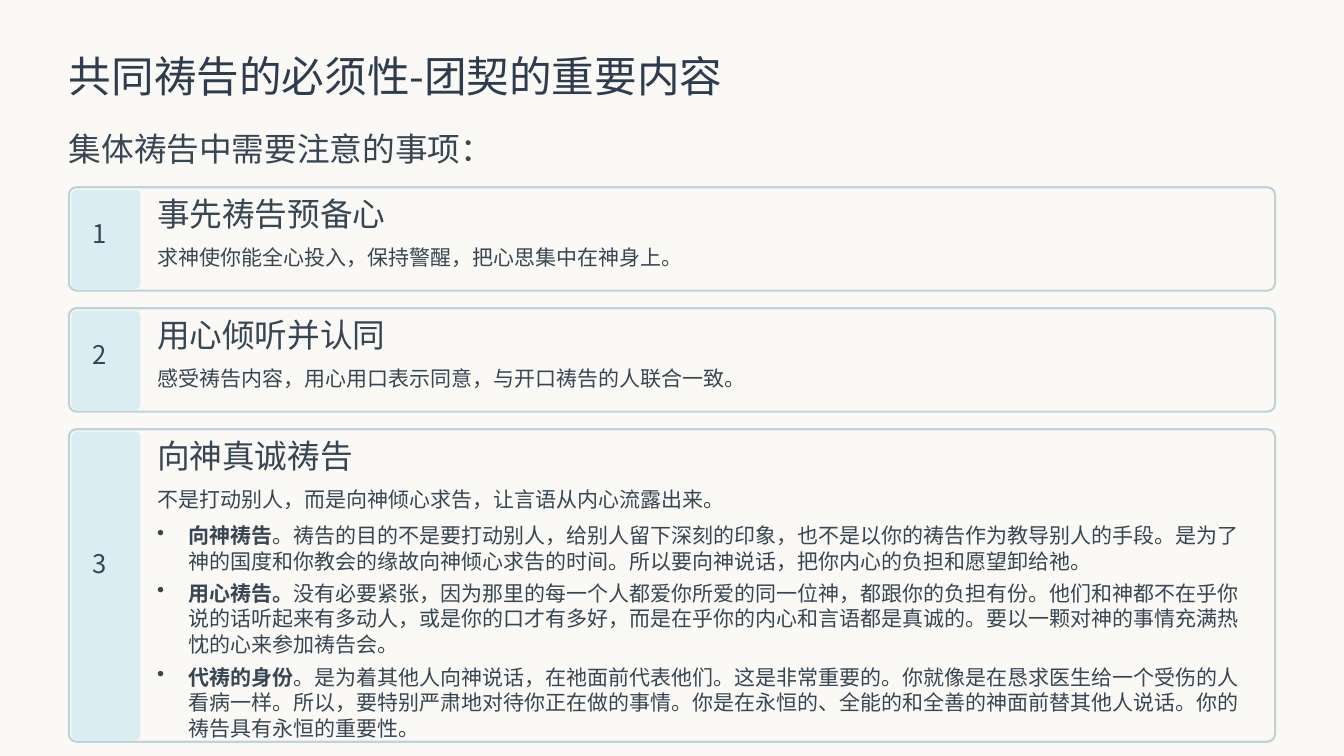
"""Build the slide on what matters when praying together."""
from dataclasses import dataclass

from pptx import Presentation
from pptx import util as u
from pptx.dml.color import RGBColor
from pptx.enum import shapes, text
from pptx.oxml import ns
from lxml import etree

FONT = "Noto Sans CJK SC"
CREAM = RGBColor(0xFA, 0xF9, 0xF5)
NAVY = RGBColor(0x2E, 0x3C, 0x4E)
SLATE = RGBColor(0x38, 0x46, 0x53)
PALE_BLUE = RGBColor(0xD9, 0xED, 0xF2)
BORDER = RGBColor(0xBF, 0xD3, 0xD8)

LEFT, WIDTH = 0.82, 14.36
TEXT_LEFT, TEXT_WIDTH = 1.87, 13.07
FIRST_CARD_TOP, CARD_GAP = 2.23, 0.21
CORNER = 0.09
BULLET_INDENT = 0.38


@dataclass(frozen=True)
class Card:
    """A numbered point."""
    heading: str
    summary: str
    height: float = 1.23
    number_offset: float = 0.43


@dataclass(frozen=True)
class Bullet:
    """A detail that opens with bold words."""
    top: float
    lead: str
    rest: str


CARDS = [
    Card("事先祷告预备心", "求神使你能全心投入，保持警醒，把心思集中在神身上。"),
    Card("用心倾听并认同", "感受祷告内容，用心用口表示同意，与开口祷告的人联合一致。"),
    Card("向神真诚祷告", "不是打动别人，而是向神倾心求告，让言语从内心流露出来。", 3.72, 1.47),
]

BULLETS = [
    Bullet(6.22, "向神祷告",
           "。祷告的目的不是要打动别人，给别人留下深刻的印象，也不是以你的祷告作为教导别人的手段。"
           "是为了神的国度和你教会的缘故向神倾心求告的时间。所以要向神说话，把你内心的负担和愿望卸给祂。"),
    Bullet(6.9, "用心祷告。",
           "没有必要紧张，因为那里的每一个人都爱你所爱的同一位神，都跟你的负担有份。"
           "他们和神都不在乎你说的话听起来有多动人，或是你的口才有多好，而是在乎你的内心和言语都是真诚的。"
           "要以一颗对神的事情充满热忱的心来参加祷告会。"),
    Bullet(7.9, "代祷的身份",
           "。是为着其他人向神说话，在祂面前代表他们。这是非常重要的。"
           "你就像是在恳求医生给一个受伤的人看病一样。所以，要特别严肃地对待你正在做的事情。"
           "你是在永恒的、全能的和全善的神面前替其他人说话。你的祷告具有永恒的重要性。"),
]


def format_run(run, size: float, color: RGBColor, bold: bool = False) -> None:
    """Set the font of a run for both Latin and Chinese text."""
    run.font.name = FONT
    run.font.size = u.Pt(size)
    run.font.bold = bold
    run.font.color.rgb = color
    east_asian = etree.Element(ns.qn("a:ea"), typeface=FONT)
    run.font._element.find(ns.qn("a:latin")).addnext(east_asian)


def prepare_frame(shape, spacing: float, wrap: bool = False):
    """Clear the margins of a text frame and return its first paragraph."""
    frame = shape.text_frame
    frame.margin_left = frame.margin_right = frame.margin_top = frame.margin_bottom = 0
    frame.word_wrap = wrap
    frame.auto_size = text.MSO_AUTO_SIZE.NONE
    frame.vertical_anchor = text.MSO_ANCHOR.TOP
    paragraph = frame.paragraphs[0]
    paragraph.alignment = text.PP_ALIGN.LEFT
    paragraph.line_spacing = u.Pt(spacing)
    return paragraph


def add_box(slide, left: float, top: float, width: float, height: float):
    """Add an empty text box."""
    return slide.shapes.add_textbox(*map(u.Inches, (left, top, width, height)))


def add_label(slide, left: float, top: float, width: float, height: float,
              words: str, size: float, spacing: float) -> None:
    """Add one line of text."""
    paragraph = prepare_frame(add_box(slide, left, top, width, height), spacing)
    paragraph.add_run().text = words
    format_run(paragraph.runs[0], size, SLATE)


def add_panel(slide, left: float, top: float, width: float, height: float,
              radius: float, fill: RGBColor, line: RGBColor | None = None) -> None:
    """Add a rounded rectangle with a given corner radius."""
    panel = slide.shapes.add_shape(shapes.MSO_SHAPE.ROUNDED_RECTANGLE,
                                   *map(u.Inches, (left, top, width, height)))
    panel.adjustments[0] = radius / min(width, height)
    panel.shadow.inherit = False
    panel.fill.solid()
    panel.fill.fore_color.rgb = fill
    if line is None:
        panel.line.fill.background()
    else:
        panel.line.color.rgb = line
        panel.line.width = u.Pt(1.8)


def add_card(slide, number: int, card: Card, top: float) -> None:
    """Add a card with its number, heading and summary."""
    add_panel(slide, LEFT, top, WIDTH, card.height, CORNER, CREAM, BORDER)
    add_panel(slide, LEFT + 0.03, top + 0.03, 0.82, card.height - 0.05, 0.06, PALE_BLUE)
    add_label(slide, 1.1, top + card.number_offset, 0.31, 0.39, str(number), 22, 22)
    add_label(slide, TEXT_LEFT, top + 0.23, 2.57, 0.32, card.heading, 28, 23)
    add_label(slide, TEXT_LEFT, top + 0.68, TEXT_WIDTH, 0.31, card.summary, 18, 22)


def add_bullet(slide, bullet: Bullet) -> None:
    """Add a bulleted paragraph."""
    box = add_box(slide, TEXT_LEFT, bullet.top, TEXT_WIDTH, 0.62)
    paragraph = prepare_frame(box, 22, wrap=True)
    properties = paragraph._p.get_or_add_pPr()
    indent = u.Inches(BULLET_INDENT)
    properties.set("marL", str(indent))
    properties.set("indent", str(-indent))
    etree.SubElement(properties, ns.qn("a:buChar"), char="•")
    for words, bold in ((bullet.lead, True), (bullet.rest, False)):
        run = paragraph.add_run()
        run.text = words
        format_run(run, 18, SLATE, bold)


def main() -> None:
    """Build and save the presentation."""
    presentation = Presentation()
    presentation.slide_width = u.Inches(16)
    presentation.slide_height = u.Inches(9)
    slide = presentation.slides.add_slide(presentation.slide_layouts.get_by_name("Title Only"))
    slide.background.fill.solid()
    slide.background.fill.fore_color.rgb = CREAM

    title = slide.shapes.title
    title.left, title.top, title.width, title.height = map(u.Inches, (LEFT, 0.56, 8.3, 0.64))
    title.text_frame.text = "共同祷告的必须性-团契的重要内容"
    format_run(prepare_frame(title, 46).runs[0], 36.5, NAVY)

    add_label(slide, LEFT, 1.62, WIDTH, 0.39, "集体祷告中需要注意的事项：", 28, 27.5)
    top = FIRST_CARD_TOP
    for number, card in enumerate(CARDS, start=1):
        add_card(slide, number, card, top)
        top += card.height + CARD_GAP
    for bullet in BULLETS:
        add_bullet(slide, bullet)
    presentation.save("out.pptx")


if __name__ == "__main__":
    main()
